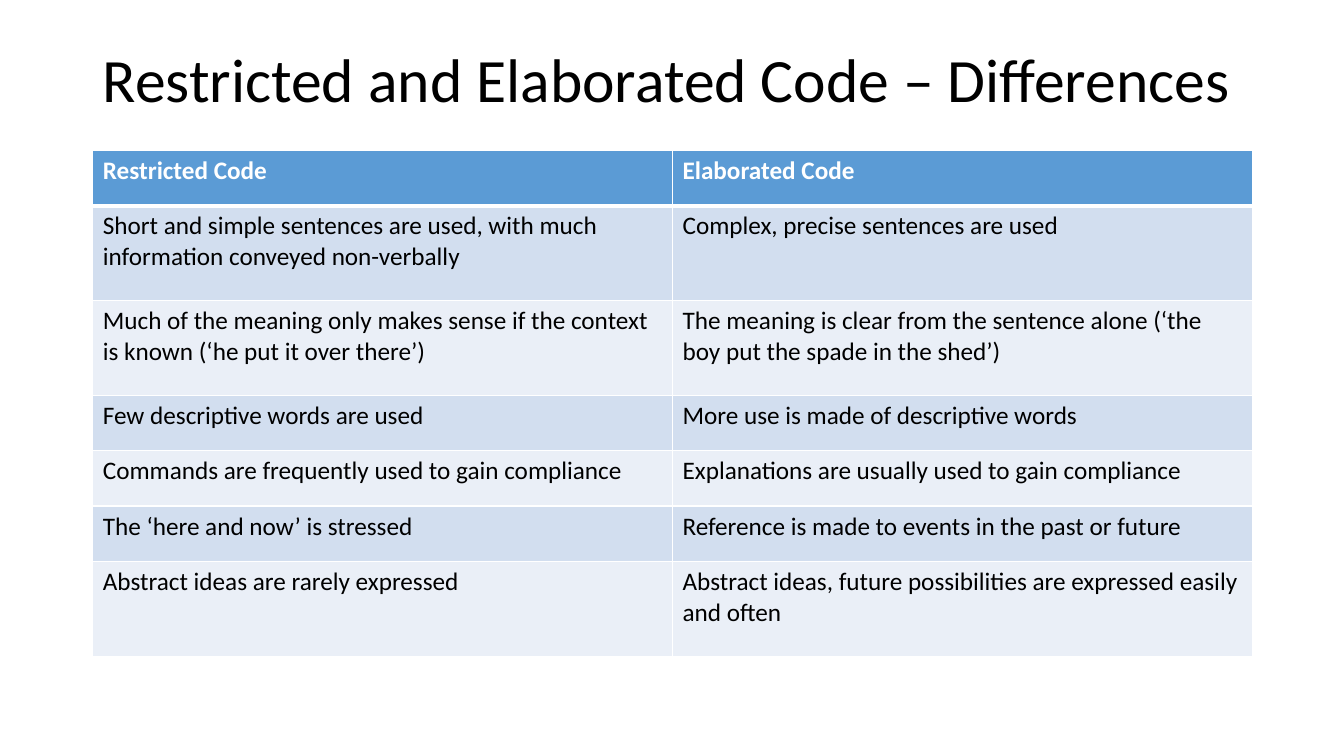
"""Build a slide with a table comparing restricted and elaborated code."""
import pptx
import pptx.dml.color
import pptx.enum.text
import pptx.oxml
import pptx.oxml.ns
import pptx.util

TITLE = "Restricted and Elaborated Code – Differences"
ROWS = [
    ("Restricted Code", "Elaborated Code"),
    ("Short and simple sentences are used, with much information conveyed non-verbally",
     "Complex, precise sentences are used"),
    ("Much of the meaning only makes sense if the context is known (‘he put it over there’)",
     "The meaning is clear from the sentence alone (‘the boy put the spade in the shed’)"),
    ("Few descriptive words are used", "More use is made of descriptive words"),
    ("Commands are frequently used to gain compliance",
     "Explanations are usually used to gain compliance"),
    ("The ‘here and now’ is stressed", "Reference is made to events in the past or future"),
    ("Abstract ideas are rarely expressed",
     "Abstract ideas, future possibilities are expressed easily and often"),
]
TALL_ROWS = {1, 2, 6}
SHORT, TALL = 0.55, 0.94
SLIDE_WIDTH, SLIDE_HEIGHT = 13.33, 7.5
MARGIN = 0.92
CONTENT_WIDTH = 11.5
TITLE_TOP, TITLE_HEIGHT = 0.4, 0.83
TABLE_TOP = 1.49
HEADER_FILL = "5B9BD5"
BAND_FILLS = ("EAEFF7", "D2DEEF")
BORDER = "FFFFFF"
TITLE_FORMAT = {"name": "Calibri", "size": pptx.util.Pt(44), "bold": False}
HEADER_FORMAT = {"name": "Calibri", "size": pptx.util.Pt(18), "bold": True}
BODY_FORMAT = {**HEADER_FORMAT, "bold": False}


def colour(value):
    return pptx.dml.color.RGBColor.from_string(value)


def write(frame, text, font_format, font_colour):
    para = frame.paragraphs[0]
    span = para.add_run()
    span.text = text
    for name, value in font_format.items():
        setattr(span.font, name, value)
    span.font.color.rgb = colour(font_colour)
    para.alignment = pptx.enum.text.PP_ALIGN.LEFT
    return para


def add_borders(cell, row):
    widths = {"L": 1, "R": 1, "T": 3 if row == 1 else 1, "B": 3 if row == 0 else 1}
    properties = cell._tc.get_or_add_tcPr()
    for side, width in widths.items():
        properties.append(pptx.oxml.parse_xml(
            f'<a:ln{side} {pptx.oxml.ns.nsdecls("a")} w="{pptx.util.Pt(width)}">'
            f'<a:solidFill><a:srgbClr val="{BORDER}"/></a:solidFill></a:ln{side}>'))


def add_title(page):
    title = page.shapes.title
    place = {"left": MARGIN, "top": TITLE_TOP, "width": CONTENT_WIDTH, "height": TITLE_HEIGHT}
    for name, value in place.items():
        setattr(title, name, pptx.util.Inches(value))
    frame = title.text_frame
    frame.word_wrap = True
    frame.auto_size = pptx.enum.text.MSO_AUTO_SIZE.NONE
    frame.vertical_anchor = pptx.enum.text.MSO_ANCHOR.MIDDLE
    write(frame, TITLE, TITLE_FORMAT, "000000").line_spacing = 0.9


def add_comparison(page):
    heights = [TALL if row in TALL_ROWS else SHORT for row in range(len(ROWS))]
    place = [pptx.util.Inches(value)
             for value in (MARGIN, TABLE_TOP, CONTENT_WIDTH, sum(heights))]
    table = page.shapes.add_table(len(ROWS), len(ROWS[0]), *place).table
    for row, texts in enumerate(ROWS):
        table.rows[row].height = pptx.util.Inches(heights[row])
        for column, text in enumerate(texts):
            cell = table.cell(row, column)
            add_borders(cell, row)
            cell.fill.solid()
            cell.fill.fore_color.rgb = colour(BAND_FILLS[row % 2] if row else HEADER_FILL)
            write(cell.text_frame, text, BODY_FORMAT if row else HEADER_FORMAT,
                  "000000" if row else "FFFFFF")


def main():
    deck = pptx.Presentation()
    deck.slide_width = pptx.util.Inches(SLIDE_WIDTH)
    deck.slide_height = pptx.util.Inches(SLIDE_HEIGHT)
    page = deck.slides.add_slide(deck.slide_layouts.get_by_name("Title Only"))
    add_title(page)
    add_comparison(page)
    deck.save("out.pptx")


if __name__ == "__main__":
    main()
